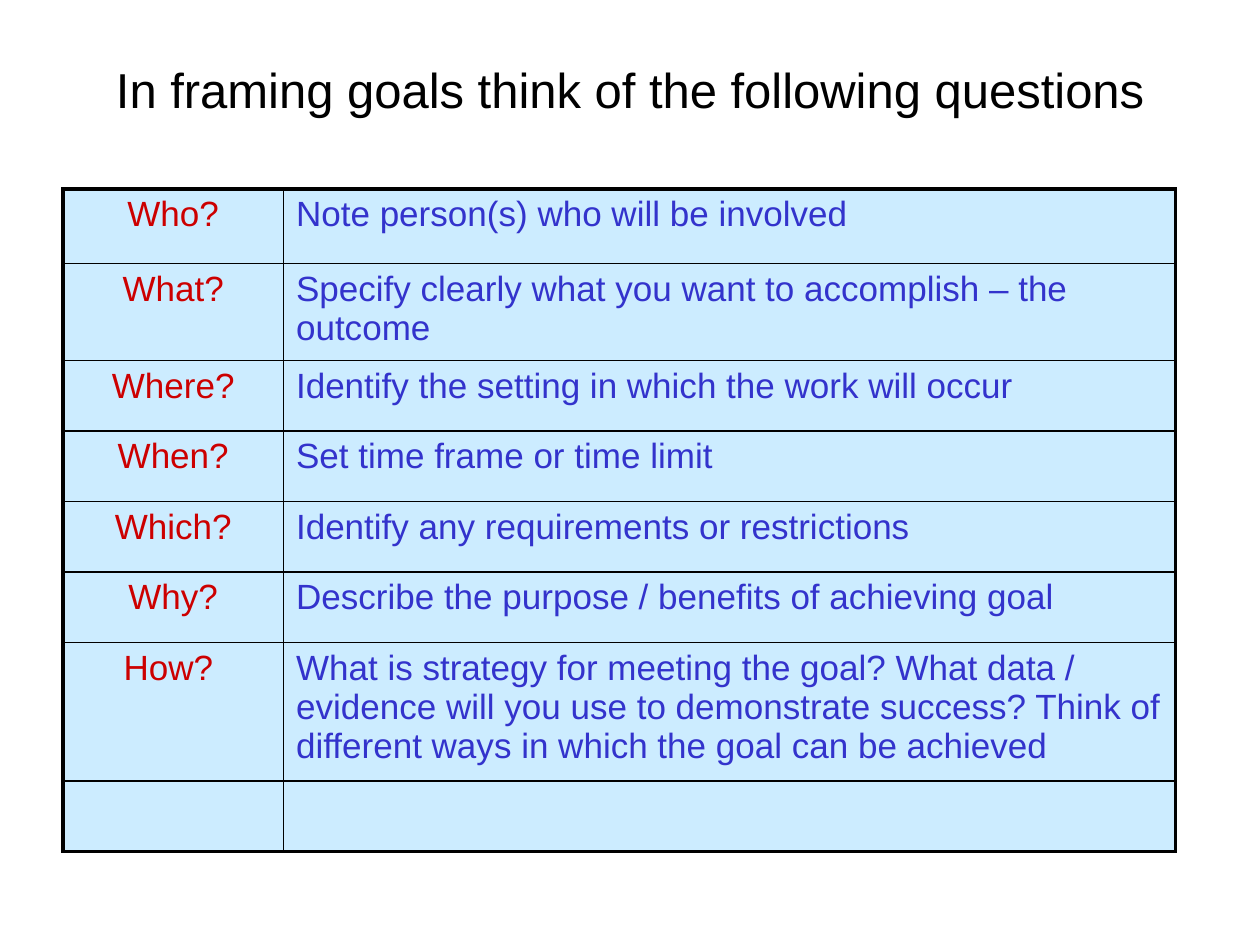
from lxml.etree import SubElement
from pptx import Presentation
from pptx.dml.color import RGBColor
from pptx.enum.text import MSO_ANCHOR, MSO_AUTO_SIZE, PP_ALIGN
from pptx.oxml.ns import qn
from pptx.util import Inches, Pt

WIDTH, HEIGHT = Inches(10), Inches(7.5)
FONT = "Arial"
COLORS = {
    "title": "000000",
    "border": "000000",
    "cell": "CCECFF",
    "question": "CC0000",
    "guidance": "3333CC",
}
THIN, THICK = 1, 2.25
COLUMNS = [1.75, 7.08]
SINGLE_ROW = 0.56
ROWS = [
    ("Who?", "Note person(s) who will be involved", 0.59),
    ("What?", "Specify clearly what you want to accomplish – the outcome", 0.77),
    ("Where?", "Identify the setting in which the work will occur", SINGLE_ROW),
    ("When?", "Set time frame or time limit", SINGLE_ROW),
    ("Which?", "Identify any requirements or restrictions", SINGLE_ROW),
    ("Why?", "Describe the purpose / benefits of achieving goal", SINGLE_ROW),
    ("How? ", "What is strategy for meeting the goal? What data / evidence will "
     "you use to demonstrate success? Think of different ways in which the "
     "goal can be achieved", 1.1),
    ("", "", SINGLE_ROW),
]


def color(name):
    return RGBColor.from_string(COLORS[name])


def format_text(tf, size, color_name, align):
    p = tf.paragraphs[0]
    p.alignment = align
    for r in p.runs:
        r.font.name = FONT
        r.font.size = Pt(size)
        r.font.color.rgb = color(color_name)


def set_title(slide, text):
    sp = slide.shapes.title
    sp.left, sp.top = int(WIDTH / 30), int(HEIGHT * 0.056)
    sp.width, sp.height = int(WIDTH * 28 / 30), int(HEIGHT * 0.076)
    tf = sp.text_frame
    tf.text = text
    tf.word_wrap = True
    tf.auto_size = MSO_AUTO_SIZE.SHAPE_TO_FIT_TEXT
    tf.vertical_anchor = MSO_ANCHOR.TOP
    format_text(tf, 28, "title", PP_ALIGN.CENTER)


def set_borders(cell, widths):
    tcPr = cell._tc.get_or_add_tcPr()
    for i, (side, width) in enumerate(widths.items()):
        ln = tcPr.makeelement(qn(f"a:ln{side}"), {"w": str(Pt(width))})
        fill = SubElement(ln, qn("a:solidFill"))
        SubElement(fill, qn("a:srgbClr"), val=COLORS["border"])
        tcPr.insert(i, ln)


def fill_cell(cell, text, color_name, align):
    cell.fill.solid()
    cell.fill.fore_color.rgb = color("cell")
    cell.text_frame.text = text
    format_text(cell.text_frame, 20, color_name, align)


def add_question_table(slide):
    heights = [height for _, _, height in ROWS]
    frame = slide.shapes.add_table(
        len(ROWS), len(COLUMNS), int(WIDTH * 0.05), int(HEIGHT * 0.2),
        Inches(sum(COLUMNS)), Inches(sum(heights)))
    table = frame.table
    table.first_row = table.horz_banding = False
    for column, width in zip(table.columns, COLUMNS):
        column.width = Inches(width)
    last = len(ROWS) - 1
    for i, (question, guidance, height) in enumerate(ROWS):
        table.rows[i].height = Inches(height)
        left, right = table.cell(i, 0), table.cell(i, 1)
        fill_cell(left, question, "question", PP_ALIGN.CENTER)
        fill_cell(right, guidance, "guidance", PP_ALIGN.LEFT)
        top = THICK if i == 0 else THIN
        bottom = THICK if i == last else THIN
        set_borders(left, {"L": THICK, "R": THIN, "T": top, "B": bottom})
        set_borders(right, {"L": THIN, "R": THICK, "T": top, "B": bottom})


def main():
    prs = Presentation()
    prs.slide_width, prs.slide_height = WIDTH, HEIGHT
    slide = prs.slides.add_slide(prs.slide_layouts[5])
    set_title(slide, "In framing goals think of the following questions")
    add_question_table(slide)
    prs.save("out.pptx")


if __name__ == "__main__":
    main()
